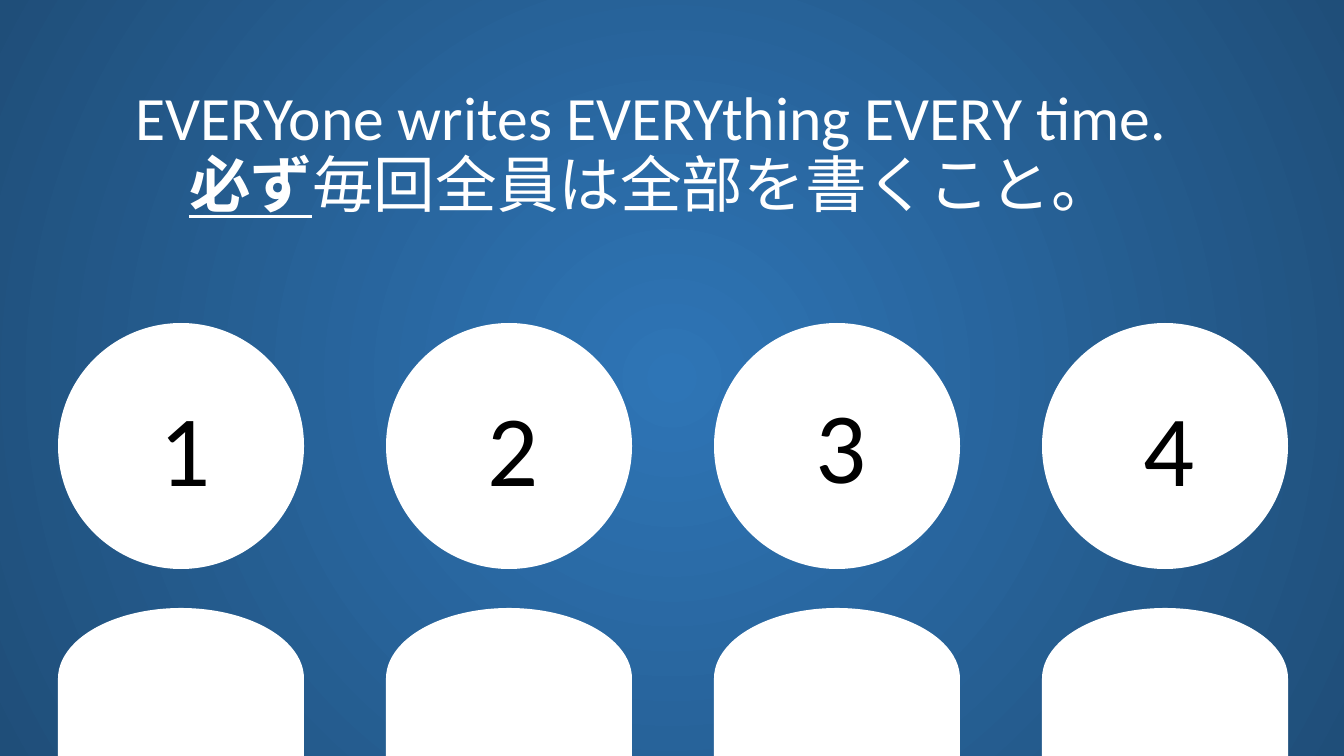
from dataclasses import dataclass

from lxml import etree
from pptx import Presentation
from pptx import util as u
from pptx.dml.color import RGBColor
from pptx.enum import shapes, text
from pptx.oxml.ns import qn

SCALE = 914400 / 100.8
FIRST, PITCH = 58, 328
HEAD, BODY = 246, 438


@dataclass(frozen=True)
class Theme:
    font: str = "Calibri"
    glow: str = "2E75B6"
    edge: str = "1F4E79"
    white: str = "FFFFFF"
    black: str = "000000"
    title: int = 44
    digit: int = 72


THEME = Theme()


def px(*vals):
    return [u.Emu(round(v * SCALE)) for v in vals]


def rgb(code):
    return RGBColor.from_string(code)


def style(para, size, color):
    para.alignment = text.PP_ALIGN.CENTER
    para.font.name = THEME.font
    para.font.size = u.Pt(size)
    para.font.color.rgb = rgb(color)


def paint_back(slide):
    """Fill the background with a gradient that runs out from the centre."""
    fill = slide.background.fill
    fill.gradient()
    for stop, place, color in zip(fill.gradient_stops, (0, 1), (THEME.glow, THEME.edge)):
        stop.position = place
        stop.color.rgb = rgb(color)
    line = slide.element.find(".//" + qn("a:lin"))
    round_ = etree.Element(qn("a:path"), {"path": "circle"})
    etree.SubElement(round_, qn("a:fillToRect"), {side: "50000" for side in "ltrb"})
    line.getparent().replace(line, round_)


def add_white(slide, kind, box, turn=0):
    shape = slide.shapes.add_shape(kind, *px(*box))
    shape.shadow.inherit = False
    shape.rotation = turn
    shape.fill.solid()
    shape.fill.fore_color.rgb = rgb(THEME.white)
    shape.line.fill.background()


def add_person(slide, left):
    """Draw a round head over a body that runs off the bottom edge."""
    add_white(slide, shapes.MSO_SHAPE.OVAL, (left, 323, HEAD, HEAD))
    body = (left + (HEAD - BODY) // 2, 704, BODY, HEAD)
    add_white(slide, shapes.MSO_SHAPE.FLOWCHART_TERMINATOR, body, 90)


def add_digit(slide, left, top, word):
    frame = slide.shapes.add_textbox(*px(left, top, 126, 132)).text_frame
    frame.word_wrap = True
    frame.auto_size = text.MSO_AUTO_SIZE.SHAPE_TO_FIT_TEXT
    para = frame.paragraphs[0]
    para.text = word
    style(para, THEME.digit, THEME.black)


def set_title(slide):
    title = slide.shapes.title
    title.left, title.top, title.width, title.height = px(72, 65, 1159, 246)
    frame = title.text_frame
    frame.word_wrap = True
    frame.auto_size = text.MSO_AUTO_SIZE.NONE
    frame.vertical_anchor = text.MSO_ANCHOR.MIDDLE
    frame.margin_bottom = px(73)[0]
    para = frame.paragraphs[0]
    para.line_spacing = 0.9
    style(para, THEME.title, THEME.white)
    para.add_run().text = "EVERYone writes EVERYthing EVERY time."
    para.add_line_break()
    must = para.add_run()
    must.text = "必ず"
    must.font.bold = must.font.underline = True
    para.add_run().text = "毎回全員は全部を書くこと。"


def main():
    deck = Presentation()
    deck.slide_width, deck.slide_height = px(1344, 756)
    slide = deck.slides.add_slide(deck.slide_layouts[5])
    paint_back(slide)
    set_title(slide)
    for i, top in enumerate((381, 381, 378, 381)):
        left = FIRST + i * PITCH
        add_person(slide, left)
        add_digit(slide, left + 64, top, str(i + 1))
    deck.save("out.pptx")


if __name__ == "__main__":
    main()
